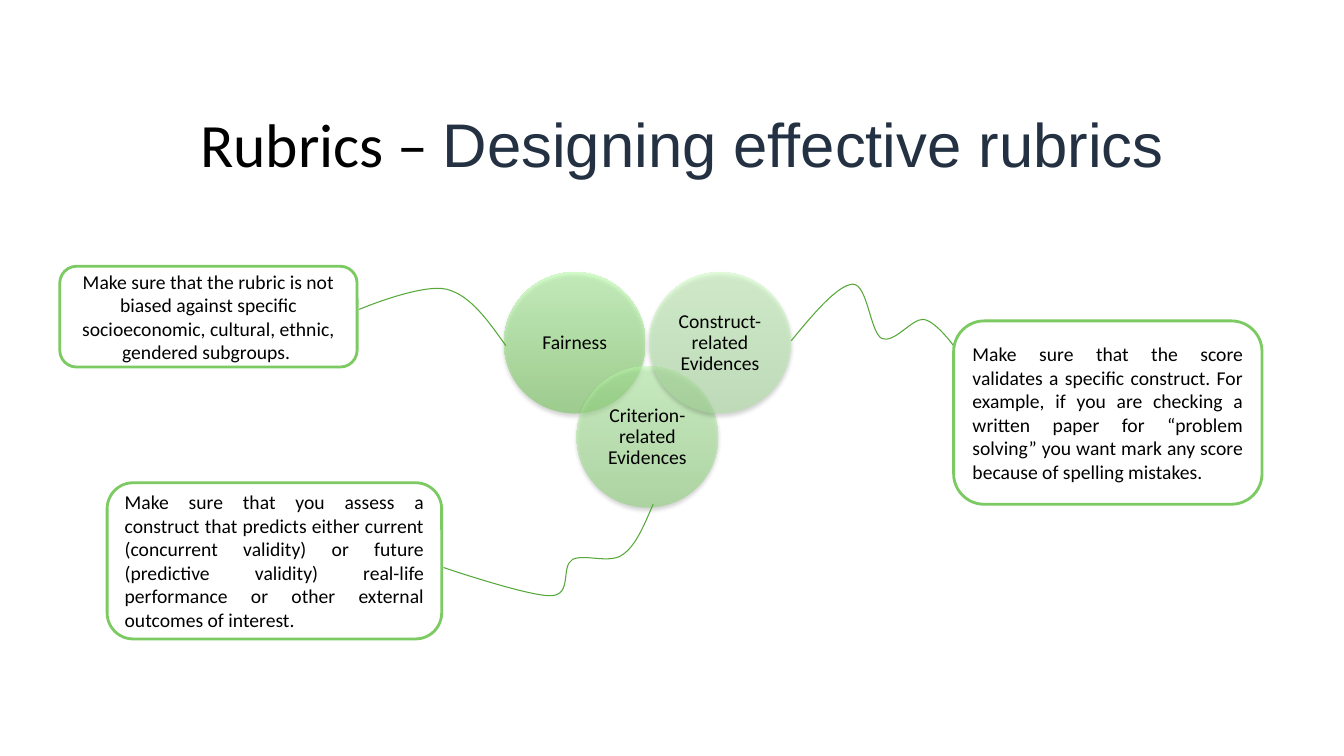
"""Build the slide on designing effective rubrics."""
import pptx
import pptx.dml.color
import pptx.enum.shapes
import pptx.enum.text
import pptx.oxml
import pptx.oxml.ns
import pptx.util

Pt = pptx.util.Pt
RGBColor = pptx.dml.color.RGBColor
Shape = pptx.enum.shapes.MSO_SHAPE
Align = pptx.enum.text.PP_ALIGN
Anchor = pptx.enum.text.MSO_ANCHOR
qn = pptx.oxml.ns.qn
NAMESPACE = pptx.oxml.ns.nsdecls("a")

BLACK = RGBColor(0x00, 0x00, 0x00)
WHITE = RGBColor(0xFF, 0xFF, 0xFF)
NAVY = RGBColor(0x24, 0x31, 0x42)
BORDER_GREEN = RGBColor(0x7C, 0xCA, 0x62)
CURVE_GREEN = RGBColor(0x54, 0xA8, 0x38)

TITLE = [("Rubrics – ", "Calibri", BLACK), ("Designing effective rubrics", "Arial", NAVY)]
TITLE_FRAME = (73.4, 56.9, 828, 97.2)

CIRCLES = [
    ("Fairness", 0, 0, RGBColor(0x69, 0xC4, 0x49), RGBColor(0xB0, 0xFF, 0x9F)),
    ("Criterion-related Evidences", 1, 1, RGBColor(0x87, 0xD3, 0x72), RGBColor(0xBC, 0xFF, 0xAA)),
    ("Construct-related Evidences", 2, 0, RGBColor(0xAB, 0xE1, 0x9E), RGBColor(0xCB, 0xFF, 0xBD)),
]
CIRCLE_LEFT, CIRCLE_TOP, DIAMETER = 360, 194.4, 101
COLUMN_STEP, ROW_STEP = 51.9, 67.3
LABEL_SIZE = 71.4

CALLOUTS = [
    ("Make sure that the rubric is not biased against specific socioeconomic, cultural, "
     "ethnic, gendered subgroups. ", Align.CENTER, (42.7, 190.2, 212.4, 72)),
    ("Make sure that you assess a construct that predicts either current (concurrent validity) "
     "or future (predictive validity) real-life performance or other external outcomes of "
     "interest. ", Align.JUSTIFY, (76.5, 344.8, 239, 111.6)),
    ("Make sure that the score validates a specific construct. For example, if you are checking "
     "a written paper for “problem solving” you want mark any score because of spelling "
     "mistakes. ", Align.JUSTIFY, (681.2, 229.2, 220.3, 131)),
]

# Each curve is a start point, then two handles and an end point per segment.
CONSTRUCT_CURVE = [
    (565.2, 243.4), (581.8, 223.2), (598.3, 203.8), (609.1, 203), (619.9, 203), (621.4, 237.6),
    (630, 241.9), (638.6, 245.5), (651.6, 227.5), (659.5, 228.2), (668.2, 229), (681.1, 247),
    (681.1, 247)]
FAIRNESS_CURVE = [
    (361.4, 247), (348.5, 229), (336.2, 211), (319, 206.6), (301, 202.3), (256.6, 221),
    (256.6, 221)]
CRITERION_CURVE = [
    (466.6, 360), (460.1, 375.1), (454.3, 389.5), (445, 396), (435.6, 403.2), (417.6, 395.3),
    (409, 399.6), (400.3, 404.6), (409, 424.8), (393.8, 425.5), (378, 426.2), (316.8, 405.4),
    (316.8, 405.4)]
UNITS_PER_POINT = 100

SHADOW = (
    '<a:outerShdw %s blurRad="%d" dist="%d" dir="5400000" rotWithShape="0">'
    '<a:srgbClr val="000000"><a:alpha val="35000"/></a:srgbClr></a:outerShdw>'
    % (NAMESPACE, Pt(3.1), Pt(1.8))
)


def write(shape, runs, size, align, spacing=None, insets=(7.2, 3.6)):
    frame = shape.text_frame
    frame.word_wrap = True
    frame.vertical_anchor = Anchor.MIDDLE
    frame.margin_left = frame.margin_right = Pt(insets[0])
    frame.margin_top = frame.margin_bottom = Pt(insets[1])
    para = frame.paragraphs[0]
    para.alignment = align
    para.line_spacing = spacing
    for text, font, colour in runs:
        span = para.add_run()
        span.text = text
        span.font.name = font
        span.font.size = Pt(size)
        span.font.color.rgb = colour


def add_plain_shape(page, kind, frame):
    shape = page.shapes.add_shape(kind, *map(Pt, frame))
    shape.shadow.inherit = False
    return shape


def add_circle(page, label, column, row, bottom_colour, top_colour):
    left, top = CIRCLE_LEFT + column * COLUMN_STEP, CIRCLE_TOP + row * ROW_STEP
    circle = add_plain_shape(page, Shape.OVAL, (left, top, DIAMETER, DIAMETER))
    circle.line.fill.background()
    circle.fill.gradient()
    circle.fill.gradient_angle = 90
    for stop, colour, position in zip(circle.fill.gradient_stops, (bottom_colour, top_colour), (0, 1)):
        stop.color.rgb = colour
        stop.position = position
    properties = circle.element.spPr
    for colour in properties.iter(qn("a:srgbClr")):
        colour.append(pptx.oxml.parse_xml('<a:alpha %s val="49000"/>' % NAMESPACE))
    properties.find(qn("a:effectLst")).append(pptx.oxml.parse_xml(SHADOW))
    margin = (DIAMETER - LABEL_SIZE) / 2
    box = page.shapes.add_textbox(*map(Pt, (left + margin, top + margin, LABEL_SIZE, LABEL_SIZE)))
    write(box, [(label, "Calibri", BLACK)], 14, Align.CENTER, 0.9, (4.5, 4.5))


def add_curve(page, points):
    units = [(round(x * UNITS_PER_POINT), round(y * UNITS_PER_POINT)) for x, y in points]
    anchors = units[::3]
    left, top = (min(values) for values in zip(*anchors))
    builder = page.shapes.build_freeform(*anchors[0], scale=Pt(1) / UNITS_PER_POINT)
    builder.add_line_segments(anchors[1:], close=False)
    curve = builder.convert_to_shape()
    segments = list(curve.element.spPr.iter(qn("a:lnTo")))
    for segment, *handles in zip(segments, units[1::3], units[2::3]):
        segment.tag = qn("a:cubicBezTo")
        for place, (x, y) in enumerate(handles):
            handle = '<a:pt %s x="%d" y="%d"/>' % (NAMESPACE, x - left, y - top)
            segment.insert(place, pptx.oxml.parse_xml(handle))
    curve.shadow.inherit = False
    curve.fill.background()
    curve.line.color.rgb = CURVE_GREEN
    curve.line.width = Pt(0.75)


def add_callout(page, text, align, frame):
    callout = add_plain_shape(page, Shape.ROUNDED_RECTANGLE, frame)
    callout.fill.solid()
    callout.fill.fore_color.rgb = WHITE
    callout.line.color.rgb = BORDER_GREEN
    callout.line.width = Pt(2)
    write(callout, [(text, "Calibri", BLACK)], 14, align)


def main():
    deck = pptx.Presentation()
    deck.slide_width, deck.slide_height = Pt(960), Pt(540)
    page = deck.slides.add_slide(deck.slide_layouts[5])
    title = page.shapes.title
    title.left, title.top, title.width, title.height = map(Pt, TITLE_FRAME)
    write(title, TITLE, 44, Align.CENTER, 0.9)
    for circle in CIRCLES:
        add_circle(page, *circle)
    add_curve(page, CONSTRUCT_CURVE)
    add_curve(page, FAIRNESS_CURVE)
    for callout in CALLOUTS:
        add_callout(page, *callout)
    add_curve(page, CRITERION_CURVE)
    deck.save("out.pptx")


if __name__ == "__main__":
    main()
